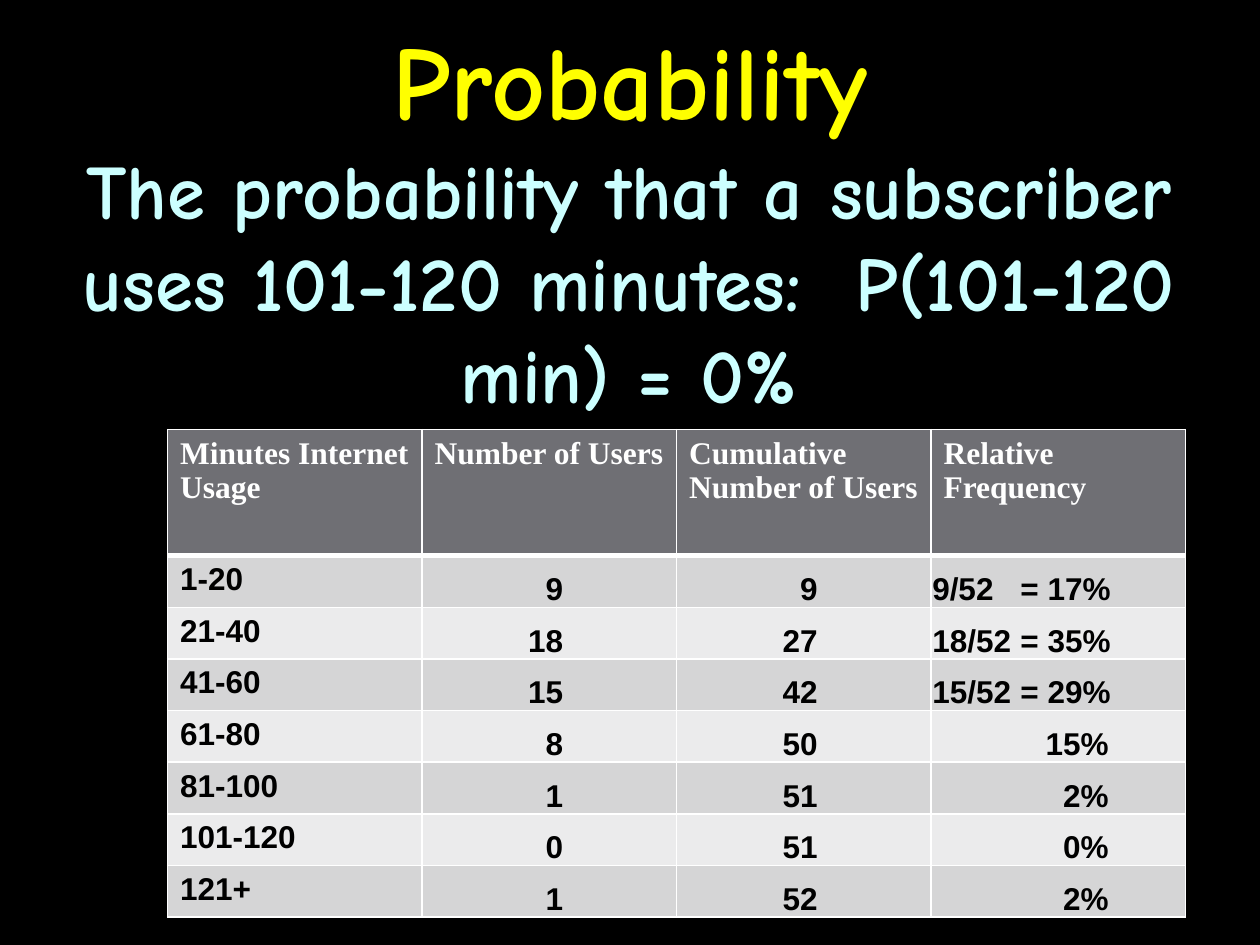
from dataclasses import dataclass

from lxml.etree import SubElement
from pptx import Presentation
from pptx.dml.color import RGBColor
from pptx.enum.text import MSO_ANCHOR, PP_ALIGN
from pptx.oxml.ns import qn
from pptx.slide import Slide
from pptx.table import Table, _Cell
from pptx.text.text import _Paragraph
from pptx.util import Inches, Pt

COLORS = {
    "background": "000000",
    "title": "FFFF00",
    "body": "CCFFFF",
    "header": "6F6F74",
    "odd_row": "D5D5D6",
    "even_row": "EBEBEC",
    "white": "FFFFFF",
    "black": "000000",
}
HEADERS = [
    "Minutes Internet Usage",
    "Number of Users",
    "Cumulative Number of Users",
    "Relative\nFrequency",
]
ROWS = [
    ["1-20", "9", "9", "9/52\t= 17%"],
    ["21-40", "18", "27", "18/52\t= 35%"],
    ["41-60", "15", "42", "15/52\t= 29%"],
    ["61-80", "8", "50", "15%"],
    ["81-100", "1", "51", "2%"],
    ["101-120", "0", "51", "0%"],
    ["121+", "1", "52", "2%"],
]
COLUMN_WIDTH = 2.02
HEADER_HEIGHT = 1
ROW_HEIGHT = 0.41
COUNT_RIGHT_MARGIN = 0.9
PERCENT_RIGHT_MARGIN = 0.61
EQUALS_TAB = 0.7


@dataclass(frozen=True)
class TextStyle:
    font: str
    size: float
    color: str


@dataclass(frozen=True)
class TextBlock:
    text: str
    left: float
    top: float
    width: float
    height: float
    style: TextStyle
    anchor: MSO_ANCHOR
    space_before: float = 0


TEXT_BLOCKS = [
    TextBlock("Probability", 0, 0, 10, 1.25,
              TextStyle("Comic Neue", 60, "title"), MSO_ANCHOR.MIDDLE),
    TextBlock("The probability that a subscriber uses 101-120 minutes:  "
              "P(101-120 min) = 0%", 0.08, 1.08, 9.83, 6.17,
              TextStyle("Comic Neue", 44, "body"), MSO_ANCHOR.TOP, 8.8),
]
HEADER_STYLE = TextStyle("Times New Roman", 18, "white")
DATA_STYLE = TextStyle("Arial", 18, "black")


def rgb(name: str) -> RGBColor:
    return RGBColor.from_string(COLORS[name])


def add_bold_run(paragraph: _Paragraph, text: str, style: TextStyle) -> None:
    run = paragraph.add_run()
    run.text = text
    run.font.name = style.font
    run.font.size = Pt(style.size)
    run.font.bold = True
    run.font.color.rgb = rgb(style.color)


def add_text_block(slide: Slide, block: TextBlock) -> None:
    shape = slide.shapes.add_textbox(Inches(block.left), Inches(block.top),
                                     Inches(block.width), Inches(block.height))
    frame = shape.text_frame
    frame.word_wrap = True
    frame.vertical_anchor = block.anchor
    paragraph = frame.paragraphs[0]
    paragraph.alignment = PP_ALIGN.CENTER
    paragraph.space_before = Pt(block.space_before)
    add_bold_run(paragraph, block.text, block.style)


def add_borders(cell: _Cell, top: float, bottom: float) -> None:
    """Draw white cell borders; call before filling, as the schema wants lines first."""
    properties = cell._tc.get_or_add_tcPr()
    for tag, width in (("lnL", 1), ("lnR", 1), ("lnT", top), ("lnB", bottom)):
        line = SubElement(properties, qn(f"a:{tag}"), w=str(Pt(width)))
        fill = SubElement(line, qn("a:solidFill"))
        SubElement(fill, qn("a:srgbClr"), val=COLORS["white"])


def add_tab_stop(paragraph: _Paragraph, position: float) -> None:
    tabs = SubElement(paragraph._p.get_or_add_pPr(), qn("a:tabLst"))
    SubElement(tabs, qn("a:tab"), pos=str(Inches(position)), algn="l")


def set_margins(cell: _Cell, left: float, top: float, right: float, bottom: float) -> None:
    cell.margin_left, cell.margin_top = Inches(left), Inches(top)
    cell.margin_right, cell.margin_bottom = Inches(right), Inches(bottom)


def fill_cell(table: Table, row: int, column: int, text: str) -> None:
    cell = table.cell(row, column)
    is_header = row == 0
    add_borders(cell, top=3 if row == 1 else 1, bottom=3 if is_header else 1)
    cell.fill.solid()
    row_color = "odd_row" if row % 2 else "even_row"
    cell.fill.fore_color.rgb = rgb("header" if is_header else row_color)

    for index, line in enumerate(text.split("\n")):
        frame = cell.text_frame
        paragraph = frame.add_paragraph() if index else frame.paragraphs[0]
        add_bold_run(paragraph, line, HEADER_STYLE if is_header else DATA_STYLE)

    if is_header or column == 0:
        set_margins(cell, 0.1, 0.05, 0.1, 0.05)
        return
    cell.vertical_anchor = MSO_ANCHOR.BOTTOM
    paragraph = cell.text_frame.paragraphs[0]
    if "\t" in text:
        set_margins(cell, 0.01, 0.01, 0.01, 0)
        add_tab_stop(paragraph, EQUALS_TAB)
    else:
        right = PERCENT_RIGHT_MARGIN if column == 3 else COUNT_RIGHT_MARGIN
        set_margins(cell, 0.01, 0.01, right, 0)
        paragraph.alignment = PP_ALIGN.RIGHT


def add_usage_table(slide: Slide) -> None:
    contents = [HEADERS, *ROWS]
    table = slide.shapes.add_table(
        len(contents), len(HEADERS), Inches(1.33), Inches(3.41),
        Inches(COLUMN_WIDTH * len(HEADERS)),
        Inches(HEADER_HEIGHT + ROW_HEIGHT * len(ROWS))).table
    table.horz_banding = False
    for column in table.columns:
        column.width = Inches(COLUMN_WIDTH)
    for row, texts in enumerate(contents):
        table.rows[row].height = Inches(ROW_HEIGHT if row else HEADER_HEIGHT)
        for column, text in enumerate(texts):
            fill_cell(table, row, column, text)


def main() -> None:
    presentation = Presentation()
    presentation.slide_width = Inches(10)
    presentation.slide_height = Inches(7.5)
    slide = presentation.slides.add_slide(presentation.slide_layouts[6])
    slide.background.fill.solid()
    slide.background.fill.fore_color.rgb = rgb("background")
    for block in TEXT_BLOCKS:
        add_text_block(slide, block)
    add_usage_table(slide)
    presentation.save("out.pptx")


if __name__ == "__main__":
    main()
